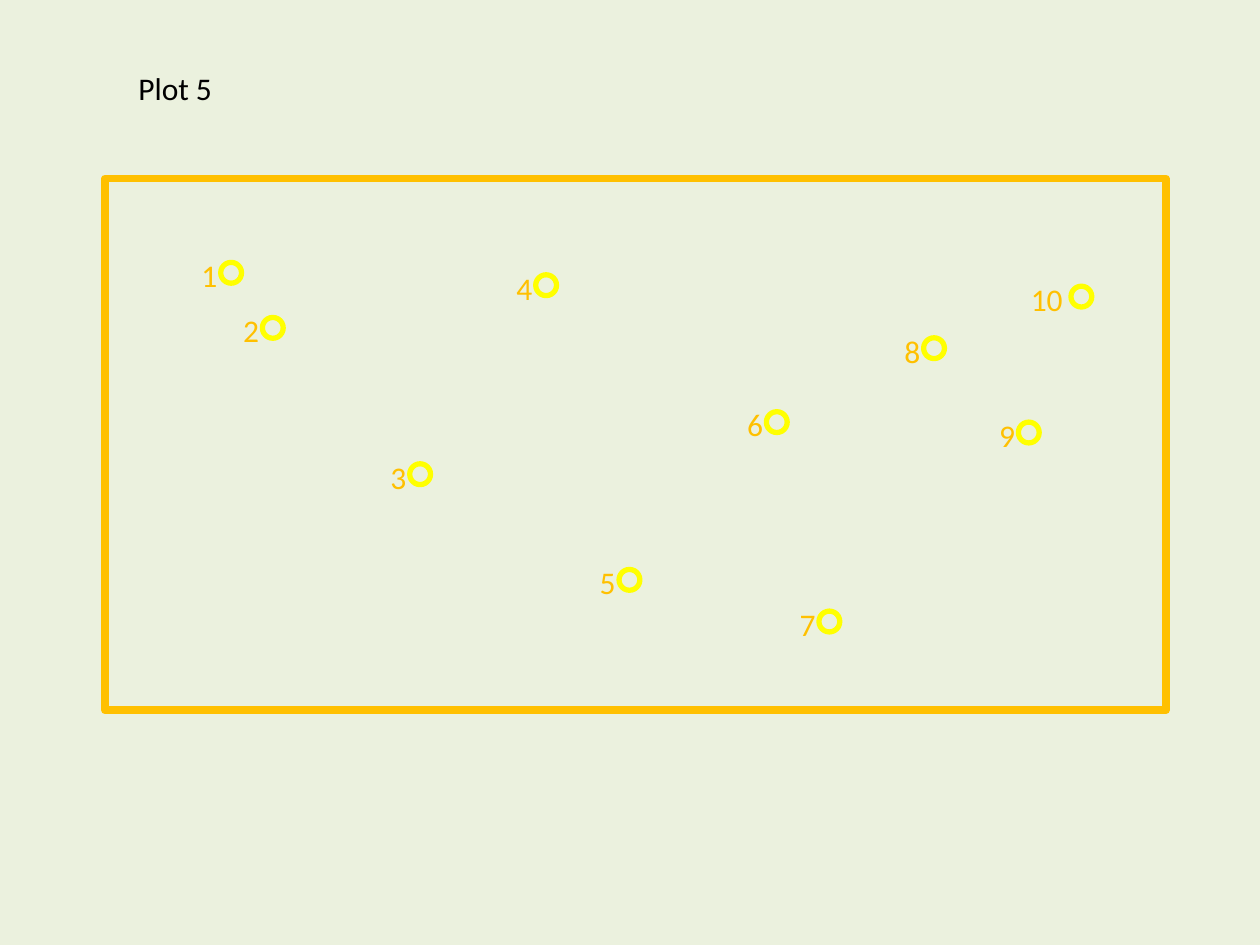
from typing import NamedTuple

from pptx import Presentation
from pptx.dml.color import RGBColor
from pptx.enum.shapes import MSO_SHAPE as Preset
from pptx.enum.text import MSO_AUTO_SIZE as AutoSize
from pptx.util import Cm, Pt

COLORS = {
    "background": "EBF1DE",
    "plot": "FFC000",
    "ring": "FFFF00",
    "title": "000000",
}
RING_SIZE = 0.42
TEXT_HEIGHT = 1.02
LABEL_RISE = 0.25


class Point(NamedTuple):
    """A numbered point: top left corner of its ring, and its label, in cm."""
    number: int
    left: float
    top: float
    label_offset: float = 0.64
    label_width: float = 0.84


POINTS = [
    Point(1, 4.45, 5.29),
    Point(2, 5.29, 6.4),
    Point(3, 8.26, 9.35),
    Point(4, 10.8, 5.54),
    Point(5, 12.48, 11.48),
    Point(6, 15.45, 8.3),
    Point(7, 16.51, 12.32),
    Point(8, 18.62, 6.81),
    Point(9, 20.53, 8.51),
    Point(10, 21.59, 5.77, label_offset=1.06, label_width=1.32),
]


def color(name: str) -> RGBColor:
    return RGBColor.from_string(COLORS[name])


def add_outline(shapes, preset: Preset, left: float, top: float, width: float,
                height: float, *, line_color: str, weight: float) -> None:
    """Draw an unfilled preset shape."""
    outline = shapes.add_shape(preset, Cm(left), Cm(top), Cm(width), Cm(height))
    outline.shadow.inherit = False
    outline.fill.background()
    outline.line.color.rgb = color(line_color)
    outline.line.width = Pt(weight)


def add_text(shapes, text: str, left: float, top: float, width: float, *,
             text_color: str, size: float = 18, font: str = "Calibri") -> None:
    box = shapes.add_textbox(Cm(left), Cm(top), Cm(width), Cm(TEXT_HEIGHT))
    frame = box.text_frame
    frame.word_wrap = False
    frame.auto_size = AutoSize.SHAPE_TO_FIT_TEXT
    run = frame.paragraphs[0].add_run()
    run.text = text
    run.font.name = font
    run.font.size = Pt(size)
    run.font.color.rgb = color(text_color)


def add_point(shapes, point: Point) -> None:
    """Group a ring with the number to its left."""
    members = shapes.add_group_shape().shapes
    add_outline(members, Preset.OVAL, point.left, point.top, RING_SIZE, RING_SIZE,
                line_color="ring", weight=3)
    add_text(members, str(point.number), point.left - point.label_offset,
             point.top - LABEL_RISE, point.label_width, text_color="plot")


def main() -> None:
    deck = Presentation()
    deck.slide_width, deck.slide_height = Cm(25.4), Cm(19.05)
    slide = deck.slides.add_slide(deck.slide_layouts[6])
    slide.background.fill.solid()
    slide.background.fill.fore_color.rgb = color("background")

    add_outline(slide.shapes, Preset.RECTANGLE, 2.12, 3.6, 21.38, 10.72,
                line_color="plot", weight=4.5)
    for point in POINTS:
        add_point(slide.shapes, point)
    add_text(slide.shapes, "Plot 5", 2.54, 1.27, 2.01, text_color="title")

    deck.save("out.pptx")


if __name__ == "__main__":
    main()
